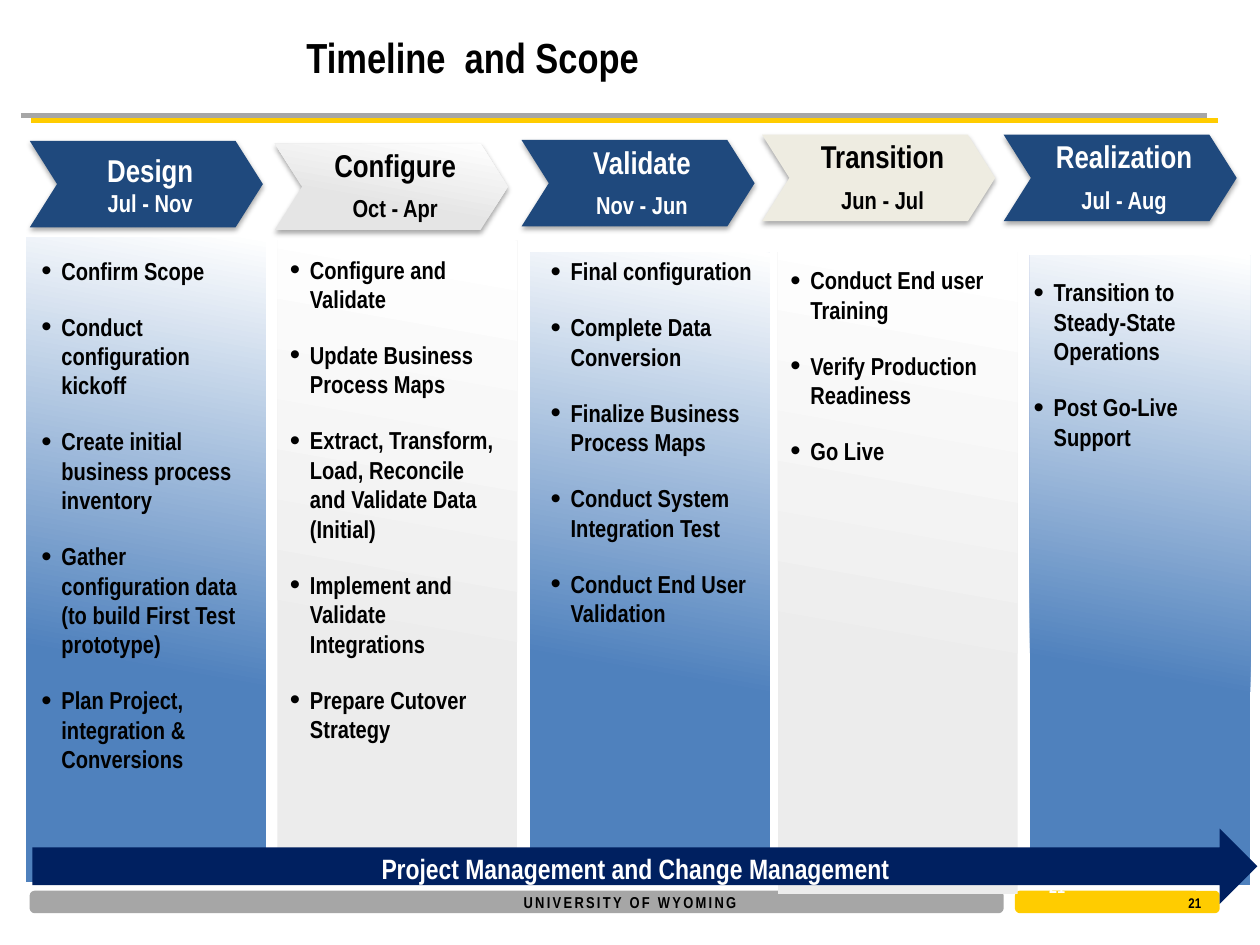
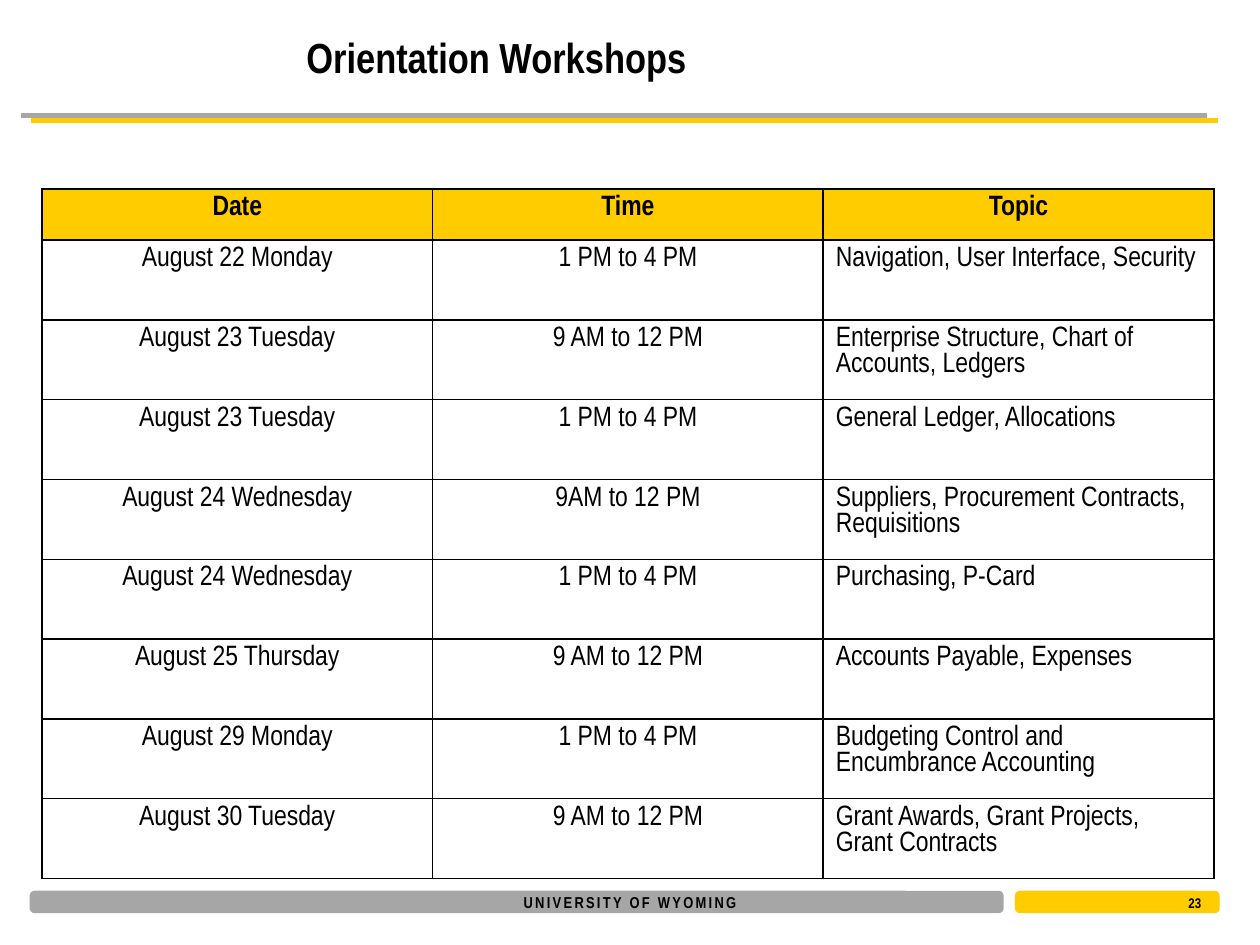
"""Builds the timeline and workshop slides of the project orientation."""
from lxml import etree
from pptx import Presentation, util as u
from pptx.dml.color import RGBColor
from pptx.enum import shapes, text
from pptx.oxml.ns import qn

Pt = u.Pt
FONT = "Arial Narrow"
BLACK = RGBColor(0x00, 0x00, 0x00)
WHITE = RGBColor(0xFF, 0xFF, 0xFF)
GREY = RGBColor(0xA6, 0xA6, 0xA6)
GOLD = RGBColor(0xFF, 0xCC, 0x00)
NAVY = RGBColor(0x00, 0x20, 0x60)
BLUE = RGBColor(0x1F, 0x49, 0x7D)
MID_BLUE = RGBColor(0x4F, 0x81, 0xBD)
SILVER = RGBColor(0xE5, 0xE5, 0xE5)
PALE_SILVER = RGBColor(0xEC, 0xEC, 0xEC)
CREAM = RGBColor(0xEE, 0xEC, 0xE1)
CENTER = text.PP_ALIGN.CENTER
MIDDLE = text.MSO_ANCHOR.MIDDLE
BOTTOM = text.MSO_ANCHOR.BOTTOM

CHEVRON_WIDTH, CHEVRON_HEIGHT, CHEVRON_NOTCH = 133.2, 49.4, 15.6
TASK_WIDTH, TASK_HEIGHT, TASK_INDENT = 134, 369, 11.5

PHASES = [
    dict(name="Design", months="Jul - Nov", chevron=(17, 80.5), fill=BLUE, ink=WHITE, gap=0,
         column=(15, 135.5, 137, 368.5), column_color=MID_BLUE, tasks_at=(16.5, 142.5),
         tasks=["Confirm Scope", "Conduct configuration kickoff",
                "Create initial business process inventory",
                "Gather configuration data (to build First Test prototype)",
                "Plan Project, integration & Conversions"]),
    dict(name="Configure", months="Oct - Apr", chevron=(157, 82), fill=SILVER, ink=BLACK, gap=7,
         column=(158.5, 137.5, 137, 367), column_color=PALE_SILVER, tasks_at=(158.5, 142),
         tasks=["Configure and Validate", "Update Business Process Maps",
                "Extract, Transform, Load, Reconcile and Validate Data (Initial)",
                "Implement and Validate Integrations", "Prepare Cutover Strategy"]),
    dict(name="Validate", months="Nov - Jun", chevron=(298, 80), fill=BLUE, ink=WHITE, gap=7,
         column=(303, 144.5, 137, 360), column_color=MID_BLUE, tasks_at=(307.5, 143),
         tasks=["Final configuration", "Complete Data Conversion",
                "Finalize Business Process Maps", "Conduct System Integration Test",
                "Conduct End User Validation"]),
    dict(name="Transition", months="Jun - Jul", chevron=(435.5, 77), fill=CREAM, ink=BLACK, gap=7,
         column=(444.5, 144, 137, 367), column_color=PALE_SILVER, tasks_at=(444.5, 148),
         tasks=["Conduct End user Training", "Verify Production Readiness", "Go Live"]),
    dict(name="Realization", months="Jul - Aug", chevron=(573.5, 77), fill=BLUE, ink=WHITE, gap=7,
         column=(588.5, 146, 126, 360), column_color=MID_BLUE, tasks_at=(583.5, 155),
         tasks=["Transition to Steady-State Operations", "Post Go-Live Support"]),
]

WORKSHOPS = [
    ("Date", "Time", "Topic"),
    ("August 22 Monday", "1 PM to 4 PM", "Navigation, User Interface, Security"),
    ("August 23 Tuesday", "9 AM to 12 PM", "Enterprise Structure, Chart of Accounts, Ledgers"),
    ("August 23 Tuesday", "1 PM to 4 PM", "General Ledger, Allocations"),
    ("August 24 Wednesday", "9AM to 12 PM", "Suppliers, Procurement Contracts, Requisitions"),
    ("August 24 Wednesday", "1 PM to 4 PM", "Purchasing, P-Card"),
    ("August 25 Thursday", "9 AM to 12 PM", "Accounts Payable, Expenses"),
    ("August 29 Monday", "1 PM to 4 PM", "Budgeting Control and Encumbrance Accounting"),
    ("August 30 Tuesday", "9 AM to 12 PM", "Grant Awards, Grant Projects, Grant Contracts"),
]


def add_child(parent, tag, **attributes):
    child = etree.SubElement(parent, qn(tag))
    for name, value in attributes.items():
        child.set(name, str(value))
    return child


def write(frame, words, size=14, color=BLACK, bold=True, align=None, after=0,
          line_spacing=None, bullet=False, tracking=None):
    paragraph = frame.paragraphs[0]
    if paragraph.runs:
        paragraph = frame.add_paragraph()
    paragraph.alignment = align
    paragraph.space_after = Pt(after)
    paragraph.line_spacing = line_spacing
    if bullet:
        properties = paragraph._p.get_or_add_pPr()
        properties.set("marL", str(Pt(TASK_INDENT)))
        properties.set("indent", str(-Pt(TASK_INDENT)))
        add_child(properties, "a:buSzPct", val=120000)
        add_child(properties, "a:buFont", typeface="Arial")
        add_child(properties, "a:buChar", char="•")
    run = paragraph.add_run()
    run.text = words
    run.font.name, run.font.size, run.font.bold = FONT, Pt(size), bold
    run.font.color.rgb = color
    if tracking:
        run._r.get_or_add_rPr().set("spc", str(tracking))


def set_frame(shape, anchor, margins):
    frame = shape.text_frame
    frame.word_wrap = True
    frame.vertical_anchor = anchor
    (frame.margin_left, frame.margin_top,
     frame.margin_right, frame.margin_bottom) = map(Pt, margins)
    return frame


def add_text_box(slide, place, anchor=text.MSO_ANCHOR.TOP):
    box = slide.shapes.add_textbox(*map(Pt, place))
    return set_frame(box, anchor, (7.2, 3.6, 7.2, 3.6))


def paint(shape, color):
    shape.shadow.inherit = False
    shape.fill.solid()
    shape.fill.fore_color.rgb = color
    shape.line.fill.background()


def paint_gradient(shape, color):
    paint(shape, color)
    shape.fill.gradient()
    shape.fill.gradient_angle = 80
    for stop, position, stop_color in zip(shape.fill.gradient_stops, (0.34, 1), (color, WHITE)):
        stop.position = position
        stop.color.rgb = stop_color


def add_shape(slide, kind, place, color):
    shape = slide.shapes.add_shape(kind, *map(Pt, place))
    paint(shape, color)
    return shape


def add_shadow(shape, color, opacity, blur, distance, angle):
    properties = shape._element.spPr
    effects = properties.find(qn("a:effectLst"))
    if effects is None:
        effects = add_child(properties, "a:effectLst")
    shadow = add_child(effects, "a:outerShdw", blurRad=Pt(blur), dist=Pt(distance),
                       dir=angle * 60000, algn="tl", rotWithShape=0)
    shadow_color = add_child(shadow, "a:srgbClr", val=color)
    add_child(shadow_color, "a:alpha", val=opacity * 1000)


def add_base_slide(presentation, title, number):
    slide = presentation.slides.add_slide(presentation.slide_layouts[6])
    rule = slide.shapes.add_connector(shapes.MSO_CONNECTOR.STRAIGHT,
                                      Pt(12), Pt(66), Pt(690), Pt(66))
    rule.line.color.rgb = GREY
    rule.line.width = Pt(3)
    add_shadow(rule, GOLD, 100, 0, 6.7, 27)
    for left, width, color in ((18, 554.5, GREY), (581, 115, GOLD)):
        bar = add_shape(slide, shapes.MSO_SHAPE.ROUNDED_RECTANGLE, (left, 510, width, 10.8), color)
        bar.line.color.rgb = color
        bar.line.width = Pt(2)
    write(add_text_box(slide, (260, 506.5, 200, 18), MIDDLE),
          "UNIVERSITY OF WYOMING", size=9, align=CENTER, tracking=130)
    write(add_text_box(slide, (168, 11, 540, 43), MIDDLE), title, size=24)
    write(add_text_box(slide, (672, 507.5, 29, 14.5)), number, size=8)
    return slide


def add_chevron(slide, phase):
    left, top = phase["chevron"]
    right, middle, bottom = left + CHEVRON_WIDTH, top + CHEVRON_HEIGHT / 2, top + CHEVRON_HEIGHT
    shoulder = right - CHEVRON_NOTCH
    builder = slide.shapes.build_freeform(Pt(left), Pt(top))
    builder.add_line_segments([
        (Pt(x), Pt(y)) for x, y in ((shoulder, top), (right, middle), (shoulder, bottom),
                                    (left, bottom), (left + CHEVRON_NOTCH, middle))])
    chevron = builder.convert_to_shape()
    if phase["fill"] == SILVER:
        paint_gradient(chevron, SILVER)
    else:
        paint(chevron, phase["fill"])
    add_shadow(chevron, BLACK, 35, 3.1, 1.8, 90)
    frame = set_frame(chevron, MIDDLE, (29.5, 2, 25, 2))
    style = dict(color=phase["ink"], align=CENTER, line_spacing=0.9 if phase["gap"] else 1.0)
    write(frame, phase["name"], size=18, after=phase["gap"], **style)
    write(frame, phase["months"], **style)


def build_timeline(presentation):
    slide = add_base_slide(presentation, "Timeline  and Scope", "21")
    write(add_text_box(slide, (592.5, 499.5, 30, 14), MIDDLE), "21", size=10, color=WHITE)
    for phase in PHASES:
        column = add_shape(slide, shapes.MSO_SHAPE.RECTANGLE, phase["column"], WHITE)
        paint_gradient(column, phase["column_color"])
        frame = add_text_box(slide, (*phase["tasks_at"], TASK_WIDTH, TASK_HEIGHT))
        for task in phase["tasks"]:
            write(frame, task, after=15.2, bullet=True)
        add_chevron(slide, phase)
    arrow = add_shape(slide, shapes.MSO_SHAPE.RIGHT_ARROW, (18.5, 473.5, 700, 43), NAVY)
    write(set_frame(arrow, BOTTOM, (0, 0, 0, 0)),
          "Project Management and Change Management", size=16, color=WHITE, align=CENTER)


def add_borders(cell):
    properties = cell._tc.get_or_add_tcPr()
    for side in ("a:lnL", "a:lnR", "a:lnT", "a:lnB"):
        border = add_child(properties, side, w=Pt(1))
        add_child(add_child(border, "a:solidFill"), "a:srgbClr", val=BLACK)


def build_workshops(presentation):
    slide = add_base_slide(presentation, "Orientation Workshops", "23")
    heights = [29.2] + [45.6] * (len(WORKSHOPS) - 1)
    table = slide.shapes.add_table(len(WORKSHOPS), 3, Pt(24), Pt(108),
                                   Pt(669.6), Pt(sum(heights))).table
    table.horz_banding = False
    for column in table.columns:
        column.width = Pt(223.2)
    for row_index, (row, height) in enumerate(zip(WORKSHOPS, heights)):
        table.rows[row_index].height = Pt(height)
        header = row_index == 0
        for column_index, words in enumerate(row):
            cell = table.cell(row_index, column_index)
            cell.margin_top = cell.margin_bottom = Pt(3.6)
            add_borders(cell)
            if header:
                cell.fill.solid()
                cell.fill.fore_color.rgb = GOLD
            else:
                cell.fill.background()
            centered = header or column_index < 2
            write(cell.text_frame, words, size=16, bold=header, line_spacing=1.0,
                  align=CENTER if centered else text.PP_ALIGN.LEFT)


def main():
    presentation = Presentation()
    presentation.slide_width, presentation.slide_height = Pt(720), Pt(540)
    build_timeline(presentation)
    build_workshops(presentation)
    presentation.save("out.pptx")


if __name__ == "__main__":
    main()
